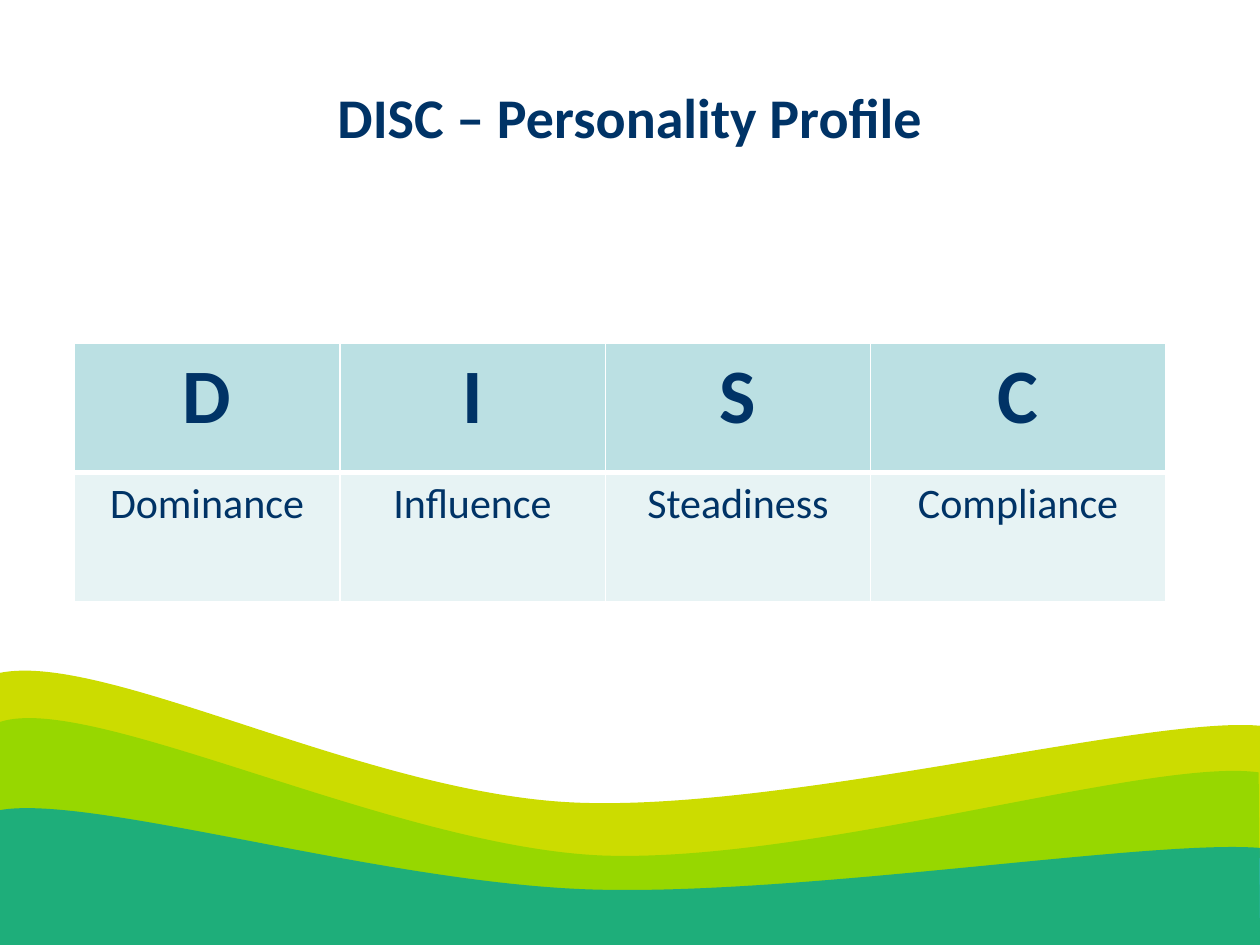
import pptx
import pptx.util
import pptx.dml.color
import pptx.enum.text
import pptx.oxml
import pptx.oxml.ns

NAVY, WHITE = "003366", "FFFFFF"
TRAITS = [("D", "Dominance"), ("I", "Influence"), ("S", "Steadiness"), ("C", "Compliance")]
WAVES = [
    ("CCDC00", 100, 72.4, [(0, 13.6), (8.5, 6.8), (29, 52), (45.7, 54.8),
                           (62.4, 57.6), (91, 27.2), (100, 30.4)]),
    ("97D700", 100, 100, [(0, 29.2), (7.2, 19.6), (31.2, 68.8), (47.8, 71.6),
                          (64.5, 74), (91.2, 40.4), (99.9, 45.2)]),
    ("00A499", 80, 100, [(0, 57.2), (7.3, 52), (30.3, 80.4), (47, 82.4),
                         (63.6, 84.4), (91.2, 66.4), (100, 69.2)]),
]


def color(code):
    """Turn a hex string into a colour."""
    return pptx.dml.color.RGBColor.from_string(code)


def share(deck, left, top, width, height):
    """Turn percents of the slide into a box of lengths."""
    wide, high = deck.slide_width / 100, deck.slide_height / 100
    return [round(n) for n in (left * wide, top * high, width * wide, height * high)]


def style(para, text, size, bold):
    """Write one centred line of text."""
    para.text = text
    para.alignment = pptx.enum.text.PP_ALIGN.CENTER
    font = para.font
    font.name, font.size, font.bold = "Calibri", pptx.util.Pt(size), bold
    font.color.rgb = color(NAVY)


def bend(wave):
    """Turn the six crest lines of a wave into two cubic curves."""
    name = pptx.oxml.ns.qn
    lines = list(wave._element.iter(name("a:lnTo")))
    for start in (1, 4):
        arc = pptx.oxml.parse_xml(f'<a:cubicBezTo {pptx.oxml.ns.nsdecls("a")}/>')
        lines[start].addprevious(arc)
        for line in lines[start:start + 3]:
            arc.append(line.find(name("a:pt")))
            line.getparent().remove(line)


def add_waves(slide, box):
    """Layer the waves, given in percent of the box."""
    left, top, width, height = box

    def place(point):
        """Put a percent point in the box."""
        return left + point[0] * width / 100, top + point[1] * height / 100

    for fill, alpha, base, knots in WAVES:
        pen = slide.shapes.build_freeform(*place((0, base)), scale=1.0)
        pen.add_line_segments([place(p) for p in [*knots, (100, base)]], close=True)
        wave = pen.convert_to_shape()
        bend(wave)
        wave.shadow.inherit = False
        wave.line.fill.background()
        wave.fill.solid()
        wave.fill.fore_color.rgb = color(fill)
        if alpha < 100:
            tint = wave.fill._xPr.find(".//" + pptx.oxml.ns.qn("a:srgbClr"))
            tint.append(pptx.oxml.parse_xml(
                f'<a:alpha {pptx.oxml.ns.nsdecls("a")} val="{alpha * 1000}"/>'))


def add_title(slide, box):
    """Centre the title in its box."""
    frame = slide.shapes.add_textbox(*box).text_frame
    frame.word_wrap = True
    frame.vertical_anchor = pptx.enum.text.MSO_ANCHOR.MIDDLE
    style(frame.paragraphs[0], "DISC – Personality Profile", 32, True)


def add_rules(cell, **widths):
    """Draw white cell borders of the given widths."""
    props = cell._tc.get_or_add_tcPr()
    for side in "LRTB":
        width = pptx.util.Pt(widths.get(side, 1))
        props.append(pptx.oxml.parse_xml(
            f'<a:ln{side} {pptx.oxml.ns.nsdecls("a")} w="{width}"><a:solidFill>'
            f'<a:srgbClr val="{WHITE}"/></a:solidFill></a:ln{side}>'))


def add_table(slide, box):
    """Set letters over trait names, the last column wider."""
    table = slide.shapes.add_table(2, len(TRAITS), *box).table
    shares = (24.33, 24.33, 24.33, 27.01)
    rows = [("BBE0E3", 44, True, {"B": 3}), ("E7F3F4", 24, False, {"T": 3})]
    for col, (trait, part) in enumerate(zip(TRAITS, shares)):
        table.columns[col].width = round(box[2] * part / 100)
        for row, (fill, size, bold, rules) in enumerate(rows):
            cell = table.cell(row, col)
            add_rules(cell, **rules)
            cell.fill.solid()
            cell.fill.fore_color.rgb = color(fill)
            style(cell.text_frame.paragraphs[0], trait[row], size, bold)


def main():
    """Build and save the slide."""
    deck = pptx.Presentation()
    deck.slide_width, deck.slide_height = pptx.util.Inches(10), pptx.util.Inches(7.5)
    slide = deck.slides.add_slide(deck.slide_layouts[6])
    add_waves(slide, share(deck, 0, 66.67, 100, 33.33))
    add_title(slide, share(deck, 5, 4, 90, 16.67))
    add_table(slide, share(deck, 5.9, 36.36, 86.6, 27.3))
    deck.save("out.pptx")


if __name__ == "__main__":
    main()
